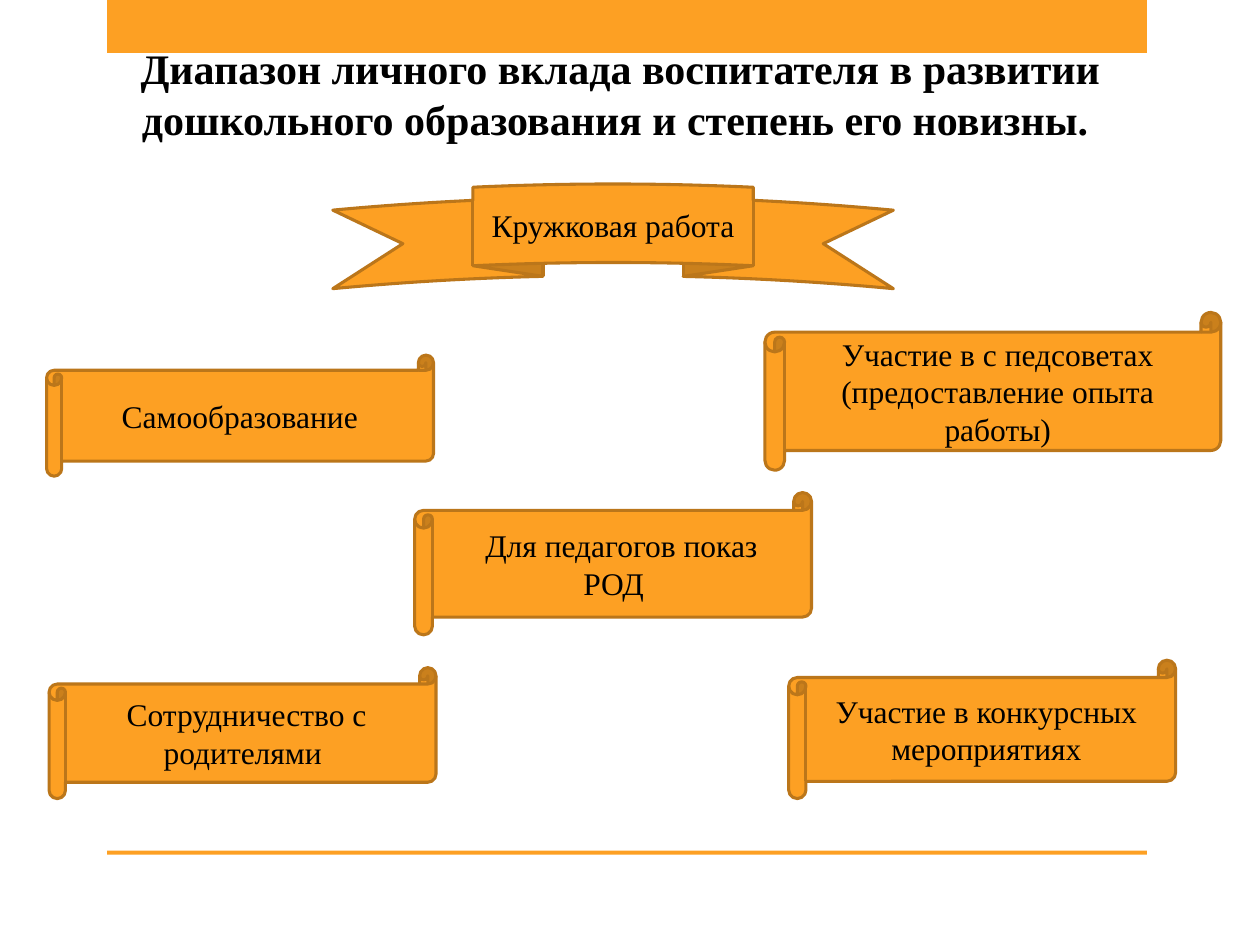
from pptx import Presentation
from pptx.dml.color import RGBColor
from pptx.enum.shapes import MSO_SHAPE
from pptx.enum.text import MSO_ANCHOR, PP_ALIGN
from pptx.util import Cm, Pt

RECTANGLE = MSO_SHAPE.RECTANGLE
SCROLL = MSO_SHAPE.HORIZONTAL_SCROLL
RIBBON = MSO_SHAPE.CURVED_UP_RIBBON
MIDDLE = MSO_ANCHOR.MIDDLE
CENTER = PP_ALIGN.CENTER

FONT = "Times New Roman"
COLORS = {"orange": "FDA023", "outline": "BB761A", "text": "000000"}


def add_orange_shape(kind, left, top, width, height):
    shape = slide.shapes.add_shape(kind, Cm(left), Cm(top), Cm(width), Cm(height))
    shape.shadow.inherit = False
    shape.fill.solid()
    shape.fill.fore_color.rgb = RGBColor.from_string(COLORS["orange"])
    shape.line.fill.background()
    return shape


def write_centered(frame, text, size, bold=False):
    frame.word_wrap = True
    para = frame.paragraphs[0]
    para.alignment = CENTER
    span = para.add_run()
    span.text = text
    span.font.name = FONT
    span.font.size = Pt(size)
    span.font.bold = bold
    span.font.color.rgb = RGBColor.from_string(COLORS["text"])


deck = Presentation()
deck.slide_width = Cm(25.4)
deck.slide_height = Cm(19.05)
slide = deck.slides.add_slide(deck.slide_layouts[6])

# Top band and bottom rule
for top, height in [(0, 1.07), (17.15, 0.08)]:
    add_orange_shape(RECTANGLE, 2.16, top, 20.96, height)

title = slide.shapes.add_textbox(Cm(1.9), Cm(0.74), Cm(21.21), Cm(2.31))
write_centered(
    title.text_frame,
    "Диапазон личного вклада воспитателя в развитии "
    "дошкольного образования и степень его новизны. ",
    24,
    bold=True,
)

# Kind, left, top, width, height, text
banners = [
    (SCROLL, 15.42, 6.3, 9.19, 3.18, "Участие в с педсоветах (предоставление опыта работы)"),
    (SCROLL, 15.9, 13.31, 7.8, 2.79, "Участие в конкурсных мероприятиях"),
    (SCROLL, 8.36, 9.93, 8, 2.87, " Для педагогов показ РОД "),
    (SCROLL, 0.94, 7.16, 7.8, 2.44, "Самообразование "),
    (SCROLL, 0.99, 13.46, 7.8, 2.64, "Сотрудничество с родителями "),
    (RIBBON, 6.71, 3.71, 11.3, 2.11, "Кружковая работа"),
]
for kind, left, top, width, height, text in banners:
    banner = add_orange_shape(kind, left, top, width, height)
    banner.line.color.rgb = RGBColor.from_string(COLORS["outline"])
    banner.line.width = Pt(1.75)
    banner.text_frame.vertical_anchor = MIDDLE
    write_centered(banner.text_frame, text, 18)

deck.save("out.pptx")
